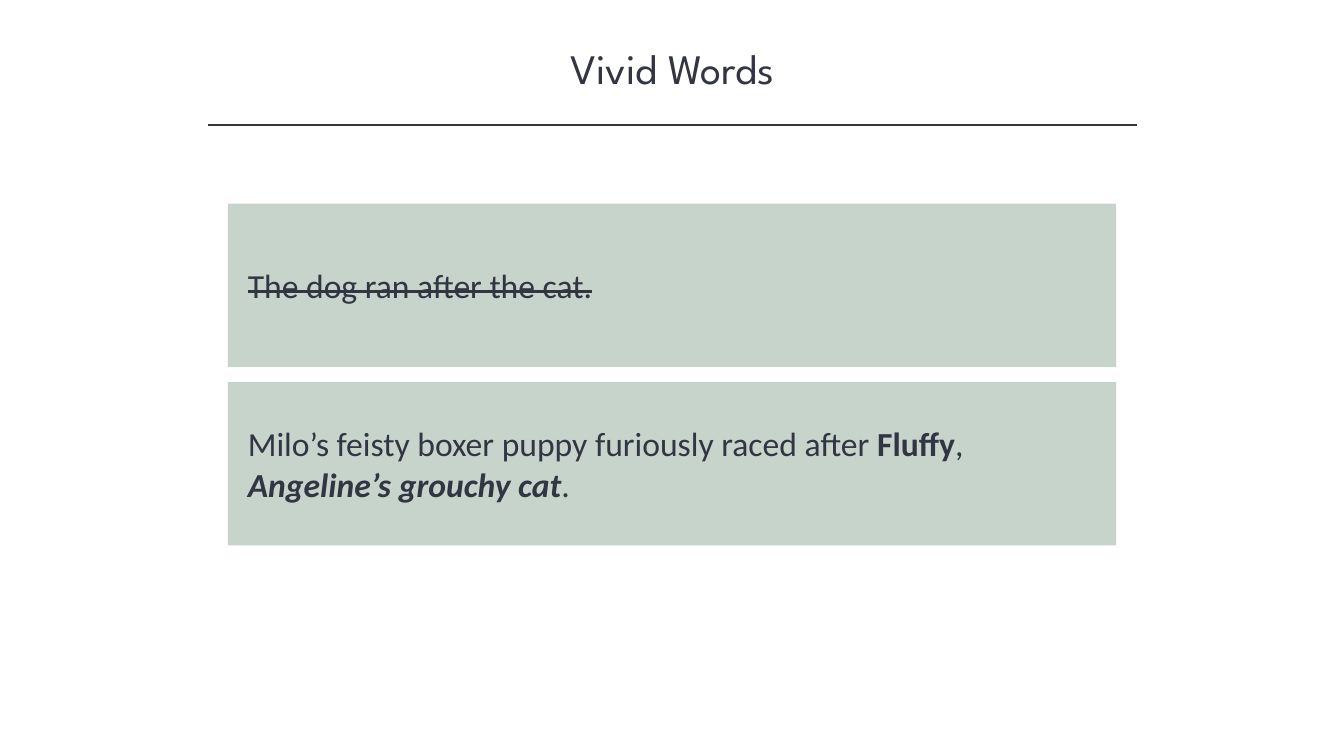
from dataclasses import dataclass

from lxml.etree import SubElement
from pptx import Presentation
from pptx.dml.color import RGBColor
from pptx.enum.shapes import MSO_CONNECTOR, MSO_SHAPE
from pptx.enum.text import MSO_ANCHOR, PP_ALIGN
from pptx.oxml.ns import qn
from pptx.shapes.autoshape import Shape
from pptx.shapes.group import GroupShape
from pptx.slide import Slide
from pptx.util import Inches, Pt

INK = RGBColor(0x32, 0x35, 0x42)
SAGE = RGBColor(0xC7, 0xD4, 0xCB)

CARD_LEFT, CARD_TOP = 2.26, 2.02
CARD_WIDTH, CARD_HEIGHT = 8.81, 1.62
CARD_STEP = 1.77
LABEL_LEFT, LABEL_WIDTH = 2.36, 8.54


@dataclass(frozen=True)
class Phrase:
    text: str
    bold: bool = False
    italic: bool = False
    strike: bool = False


@dataclass(frozen=True)
class Card:
    label_height: float
    phrases: tuple[Phrase, ...]


CARDS = (
    Card(0.5, (Phrase("The dog ran after the cat.", strike=True),)),
    Card(0.91, (
        Phrase("Milo’s feisty boxer puppy furiously raced after "),
        Phrase("Fluffy", bold=True),
        Phrase(", "),
        Phrase("Angeline’s grouchy cat", bold=True, italic=True),
        Phrase("."),
    )),
)


def add_title(page: Slide, text: str) -> None:
    box = page.shapes.add_textbox(Inches(1.67), Inches(0.37), Inches(10), Inches(0.61))
    box.text_frame.word_wrap = True
    para = box.text_frame.paragraphs[0]
    para.text = text
    para.alignment = PP_ALIGN.CENTER
    para.font.name = "League Spartan"
    para.font.size = Pt(30)
    para.font.color.rgb = INK


def add_rule(page: Slide) -> None:
    rule = page.shapes.add_connector(
        MSO_CONNECTOR.STRAIGHT, Inches(2.06), Inches(1.24), Inches(11.28), Inches(1.24)
    )
    rule.line.color.rgb = INK
    rule.line.width = Pt(1)
    SubElement(rule._element.spPr, qn("a:effectLst"))


def add_block(group: GroupShape, left: float, top: float, width: float, height: float) -> Shape:
    block = group.shapes.add_shape(
        MSO_SHAPE.RECTANGLE, Inches(left), Inches(top), Inches(width), Inches(height)
    )
    block.shadow.inherit = False
    block.fill.solid()
    block.fill.fore_color.rgb = SAGE
    block.line.fill.background()
    return block


def add_card(page: Slide, card: Card, top: float) -> None:
    group = page.shapes.add_group_shape()
    add_block(group, CARD_LEFT, top, CARD_WIDTH, CARD_HEIGHT)
    label_top = top + (CARD_HEIGHT - card.label_height) / 2
    label = add_block(group, LABEL_LEFT, label_top, LABEL_WIDTH, card.label_height)
    frame = label.text_frame
    frame.word_wrap = True
    frame.vertical_anchor = MSO_ANCHOR.MIDDLE
    para = frame.paragraphs[0]
    para.alignment = PP_ALIGN.LEFT
    para.font.name = "Calibri"
    para.font.size = Pt(24)
    para.font.color.rgb = INK
    for phrase in card.phrases:
        span = para.add_run()
        span.text = phrase.text
        span.font.bold = phrase.bold
        span.font.italic = phrase.italic
        if phrase.strike:
            span._r.get_or_add_rPr().set("strike", "sngStrike")


def main() -> None:
    deck = Presentation()
    deck.slide_width, deck.slide_height = Inches(13.33), Inches(7.5)
    page = deck.slides.add_slide(deck.slide_layouts[6])
    add_title(page, "Vivid Words")
    add_rule(page)
    for index, card in enumerate(CARDS):
        add_card(page, card, CARD_TOP + index * CARD_STEP)
    deck.save("out.pptx")


if __name__ == "__main__":
    main()
